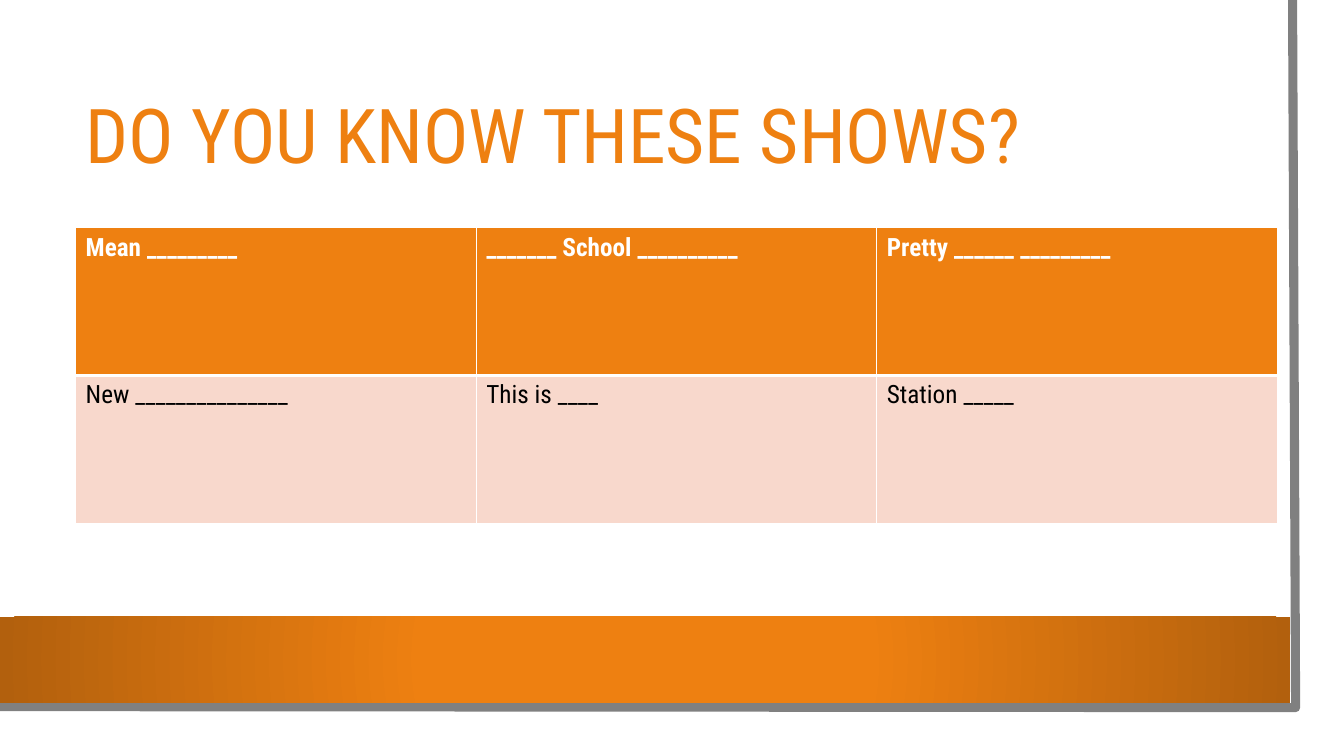
import dataclasses

import lxml.etree
import pptx
import pptx.dml.color
import pptx.enum.shapes
import pptx.enum.text
import pptx.oxml
import pptx.oxml.ns
import pptx.util

Inches = pptx.util.Inches
Pt = pptx.util.Pt
qn = pptx.oxml.ns.qn
RECT = pptx.enum.shapes.MSO_SHAPE.RECTANGLE


@dataclasses.dataclass(frozen=True)
class Theme:
    font: str = "Roboto Condensed"
    orange: str = "EE8011"
    brown: str = "B2600D"
    pink: str = "F8D8CC"
    grey: str = "808080"
    white: str = "FFFFFF"
    black: str = "000000"
    title_size: float = 54
    cell_size: float = 18
    frame_width: float = 6.5
    thin: float = 1
    thick: float = 3


@dataclasses.dataclass(frozen=True)
class Box:
    left: float
    top: float
    width: float
    height: float

    def emu(self) -> list[int]:
        return [Inches(v) for v in dataclasses.astuple(self)]


@dataclasses.dataclass(frozen=True)
class ShowRow:
    shows: tuple[str, ...]
    fill: str
    color: str
    bold: bool
    top: float
    bottom: float


THEME = Theme()
PANEL = Box(0, 0, 13.1, 7.27)
BAND = Box(0, 6.12, 12.8, 0.85)
TITLE = Box(0.75, 0.75, 11.37, 1.26)
TABLE = Box(0.75, 2.26, 11.92, 2.93)
FRAME = ((12.82, 0), (12.85, 7.02), (-0.03, 7.01))
ROWS = (
    ShowRow(("Mean _________", "_______ School __________", "Pretty ______ _________"),
            THEME.orange, THEME.white, True, THEME.thin, THEME.thick),
    ShowRow(("New _______________", "This is ____", "Station _____"),
            THEME.pink, THEME.black, False, THEME.thick, THEME.thin),
)


def rgb(color: str) -> pptx.dml.color.RGBColor:
    return pptx.dml.color.RGBColor.from_string(color)


def add_text(tf, text: str, size: float, color: str, bold: bool = False) -> None:
    p = tf.paragraphs[0]
    r = p.add_run()
    r.text = text
    formats = {"name": THEME.font, "size": Pt(size), "bold": bold}
    for name, value in formats.items():
        setattr(r.font, name, value)
    r.font.color.rgb = rgb(color)


def add_rect(slide, box: Box, fill: str):
    sp = slide.shapes.add_shape(RECT, *box.emu())
    sp.shadow.inherit = False
    sp.fill.solid()
    sp.fill.fore_color.rgb = rgb(fill)
    sp.line.fill.background()
    return sp


def add_frame(slide) -> None:
    points = [(Inches(x), Inches(y)) for x, y in FRAME]
    builder = slide.shapes.build_freeform(*points[0])
    builder.add_line_segments(points[1:], close=False)
    sp = builder.convert_to_shape()
    sp.shadow.inherit = False
    sp.fill.background()
    sp.line.color.rgb = rgb(THEME.grey)
    sp.line.width = Pt(THEME.frame_width)


def add_band(slide) -> None:
    sp = add_rect(slide, BAND, THEME.orange)
    # Radial gradient, darker towards both ends
    stops = "".join(f'<a:gs pos="{pos * 1000}"><a:srgbClr val="{color}"/></a:gs>'
                    for pos, color in ((34, THEME.orange), (100, THEME.brown)))
    gradient = pptx.oxml.parse_xml(
        f'<a:gradFill {pptx.oxml.ns.nsdecls("a")} rotWithShape="1">'
        f'<a:gsLst>{stops}</a:gsLst><a:path path="circle">'
        '<a:fillToRect l="50000" t="50000" r="50000" b="50000"/></a:path></a:gradFill>')
    props = sp.element.spPr
    props.replace(props.find(qn("a:solidFill")), gradient)


def add_title(slide) -> None:
    tf = slide.shapes.add_textbox(*TITLE.emu()).text_frame
    formats = {"word_wrap": True, "vertical_anchor": pptx.enum.text.MSO_ANCHOR.MIDDLE}
    for name, value in formats.items():
        setattr(tf, name, value)
    add_text(tf, "DO YOU KNOW THESE SHOWS?", THEME.title_size, THEME.orange)
    tf.paragraphs[0].line_spacing = 0.9


def set_borders(cell, widths: dict[str, float]) -> None:
    props = cell._tc.get_or_add_tcPr()
    for i, (side, width) in enumerate(widths.items()):
        ln = lxml.etree.Element(qn(f"a:ln{side}"), w=str(Pt(width)))
        fill = lxml.etree.SubElement(ln, qn("a:solidFill"))
        lxml.etree.SubElement(fill, qn("a:srgbClr"), val=THEME.white)
        props.insert(i, ln)


def add_show_table(slide) -> None:
    columns = len(ROWS[0].shows)
    table = slide.shapes.add_table(len(ROWS), columns, *TABLE.emu()).table
    table.horz_banding = False
    for i, row in enumerate(ROWS):
        for j, show in enumerate(row.shows):
            cell = table.cell(i, j)
            cell.fill.solid()
            cell.fill.fore_color.rgb = rgb(row.fill)
            add_text(cell.text_frame, show, THEME.cell_size, row.color, row.bold)
            set_borders(cell, {"L": THEME.thin, "R": THEME.thin,
                               "T": row.top, "B": row.bottom})


def main() -> None:
    prs = pptx.Presentation()
    prs.slide_width, prs.slide_height = Inches(13.33), Inches(7.5)
    s = prs.slides.add_slide(prs.slide_layouts[6])
    # Backdrop
    add_rect(s, PANEL, THEME.white)
    add_frame(s)
    add_band(s)
    # Content
    add_title(s)
    add_show_table(s)
    prs.save("out.pptx")


if __name__ == "__main__":
    main()
